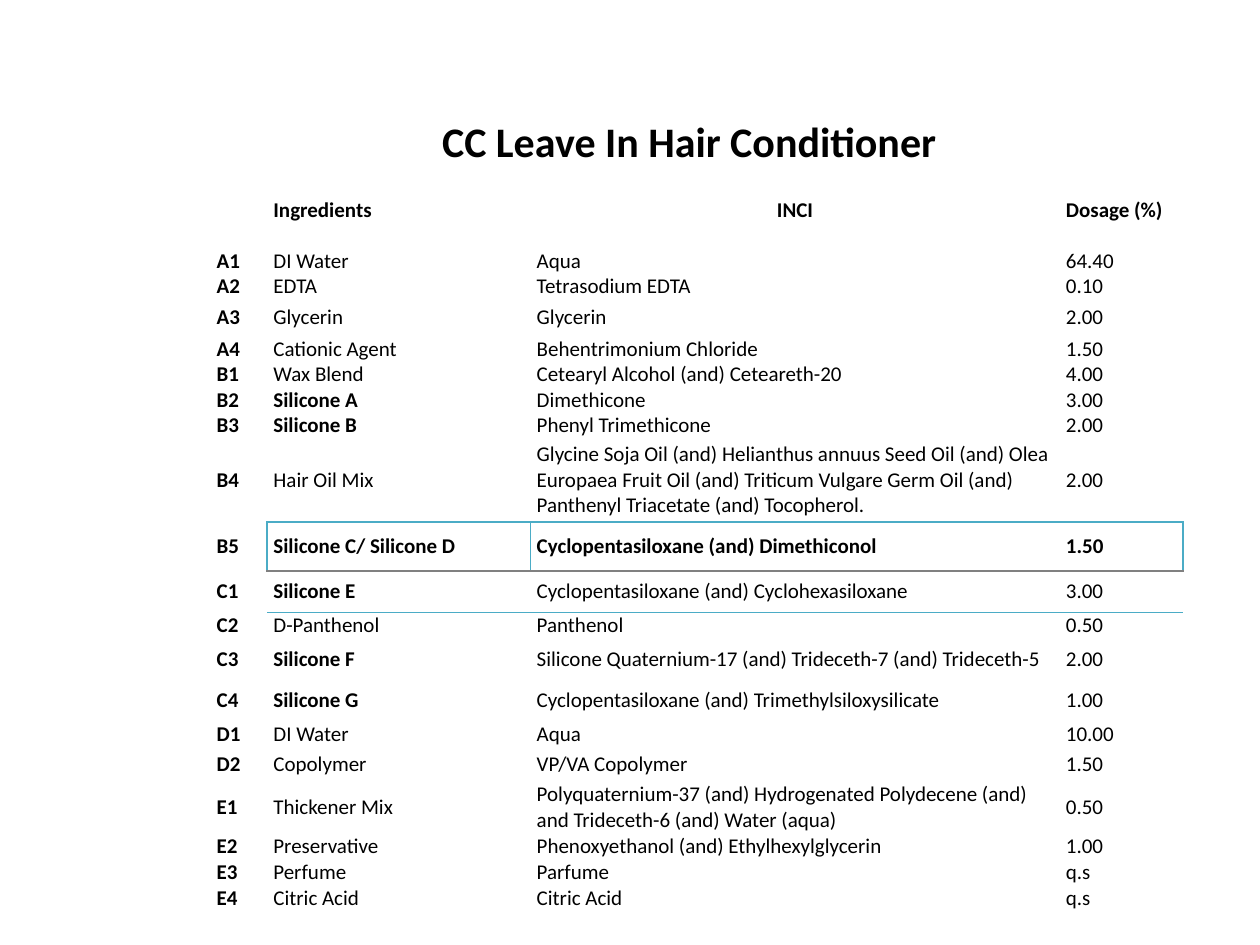
from dataclasses import dataclass

from lxml import etree
from pptx import Presentation
from pptx import util as u
from pptx.dml.color import RGBColor
from pptx.enum import text
from pptx.oxml import ns

COLORS = {"text": "000000", "frame": "4BACC6", "frame_base": "808080"}
FONT = "Calibri"
NO_STYLE = "{2D5ABB26-0587-4C30-8999-92F81FD0307C}"
COLUMN_WIDTHS = (0.45, 2.09, 4.2, 0.98)
HEADINGS = ("", "Ingredients", "INCI", "Dosage (%)")
HEADING_HEIGHT = 0.6
HIGHLIGHT = "B5"


@dataclass
class Ingredient:
    code: str
    name: str
    inci: str
    dosage: str
    height: float = 0.2
    house: bool = False  # supplier's own product, set in bold


FORMULA = [
    Ingredient("A1", "DI Water", "Aqua", "64.40"),
    Ingredient("A2", "EDTA", "Tetrasodium EDTA", "0.10"),
    Ingredient("A3", "Glycerin", "Glycerin", "2.00", 0.29),
    Ingredient("A4", "Cationic Agent", "Behentrimonium Chloride", "1.50"),
    Ingredient("B1", "Wax Blend", "Cetearyl Alcohol (and) Ceteareth-20", "4.00"),
    Ingredient("B2", "Silicone A", "Dimethicone", "3.00", house=True),
    Ingredient("B3", "Silicone B", "Phenyl Trimethicone", "2.00", house=True),
    Ingredient("B4", "Hair Oil Mix",
               "Glycine Soja Oil (and) Helianthus annuus Seed Oil (and) Olea "
               "Europaea Fruit Oil (and) Triticum Vulgare Germ Oil (and) "
               "Panthenyl Triacetate (and) Tocopherol.", "2.00", 0.66),
    Ingredient("B5", "Silicone C/ Silicone D", "Cyclopentasiloxane (and) Dimethiconol",
               "1.50", 0.39, True),
    Ingredient("C1", "Silicone E", "Cyclopentasiloxane (and) Cyclohexasiloxane",
               "3.00", 0.33, True),
    Ingredient("C2", "D-Panthenol", "Panthenol", "0.50"),
    Ingredient("C3", "Silicone F",
               "Silicone Quaternium-17 (and) Trideceth-7 (and) Trideceth-5",
               "2.00", 0.33, True),
    Ingredient("C4", "Silicone G", "Cyclopentasiloxane (and) Trimethylsiloxysilicate",
               "1.00", 0.33, True),
    Ingredient("D1", "DI Water", "Aqua", "10.00"),
    Ingredient("D2", "Copolymer", "VP/VA Copolymer", "1.50", 0.27),
    Ingredient("E1", "Thickener Mix",
               "Polyquaternium-37 (and) Hydrogenated Polydecene (and) "
               "and Trideceth-6 (and) Water (aqua)", "0.50", 0.42),
    Ingredient("E2", "Preservative", "Phenoxyethanol (and) Ethylhexylglycerin", "1.00"),
    Ingredient("E3", "Perfume", "Parfume", "q.s"),
    Ingredient("E4", "Citric Acid", "Citric Acid", "q.s"),
]


def style_paragraph(paragraph, size: float, bold: bool) -> None:
    for run in paragraph.runs:
        run.font.name = FONT
        run.font.size = u.Pt(size)
        run.font.bold = bold
        run.font.color.rgb = RGBColor.from_string(COLORS["text"])


def set_borders(cell, edges: dict[str, str]) -> None:
    """Add 1 pt borders; edges maps L, R, T or B to a colour key."""
    properties = cell._tc.get_or_add_tcPr()
    for side in "LRTB":
        if side in edges:
            line = etree.SubElement(properties, ns.qn(f"a:ln{side}"), w=str(u.Pt(1)))
            fill = etree.SubElement(line, ns.qn("a:solidFill"))
            etree.SubElement(fill, ns.qn("a:srgbClr"), val=COLORS[edges[side]])


def fill_cell(cell, content: str, bold: bool, edges: dict[str, str]) -> None:
    cell.margin_left = cell.margin_right = u.Inches(0.05)
    cell.margin_top = cell.margin_bottom = 0
    cell.vertical_anchor = text.MSO_ANCHOR.MIDDLE
    set_borders(cell, edges)
    cell.fill.background()
    paragraph = cell.text_frame.paragraphs[0]
    paragraph.text = content
    paragraph.font.size = u.Pt(12)
    style_paragraph(paragraph, 12, bold)


def frame_edges(code: str, column: int) -> dict[str, str]:
    """Borders of the highlighted row and of the rule below the next one."""
    if column == 0:
        return {}
    if code == "C1":
        return {"T": "frame_base", "B": "frame"}
    if code != HIGHLIGHT:
        return {}
    edges = {"T": "frame", "B": "frame_base"}
    if column == 1:
        edges |= {"L": "frame", "R": "frame"}
    if column == 3:
        edges["R"] = "frame"
    return edges


def add_formula_table(slide) -> None:
    heights = [HEADING_HEIGHT] + [item.height for item in FORMULA]
    formula = slide.shapes.add_table(
        len(heights), len(COLUMN_WIDTHS), u.Inches(1.67), u.Inches(1.37),
        u.Inches(sum(COLUMN_WIDTHS)), u.Inches(sum(heights))).table
    formula.first_row = formula.horz_banding = False
    formula._tbl.tblPr.find(ns.qn("a:tableStyleId")).text = NO_STYLE
    for column, width in zip(formula.columns, COLUMN_WIDTHS):
        column.width = u.Inches(width)
    for row, height in zip(formula.rows, heights):
        row.height = u.Inches(height)

    # Headings
    for column, heading in enumerate(HEADINGS):
        fill_cell(formula.cell(0, column), heading, True, {})
    formula.cell(0, 2).text_frame.paragraphs[0].alignment = text.PP_ALIGN.CENTER

    # Ingredients
    for row, item in enumerate(FORMULA, 1):
        highlighted = item.code == HIGHLIGHT
        entries = (item.code, item.name, item.inci, item.dosage)
        bolds = (True, item.house, highlighted, highlighted)
        for column, (entry, bold) in enumerate(zip(entries, bolds)):
            fill_cell(formula.cell(row, column), entry, bold,
                      frame_edges(item.code, column))


def add_title(slide) -> None:
    title = slide.shapes.add_textbox(
        u.Inches(3.41), u.Inches(0.87), u.Inches(4.25), u.Inches(0.5)).text_frame
    title.word_wrap = True
    title.text = "CC Leave In Hair Conditioner"
    style_paragraph(title.paragraphs[0], 24, True)


def main() -> None:
    deck = Presentation()
    deck.slide_width, deck.slide_height = u.Inches(10), u.Inches(7.5)
    slide = deck.slides.add_slide(deck.slide_layouts[6])
    add_formula_table(slide)
    add_title(slide)
    deck.save("out.pptx")


if __name__ == "__main__":
    main()
